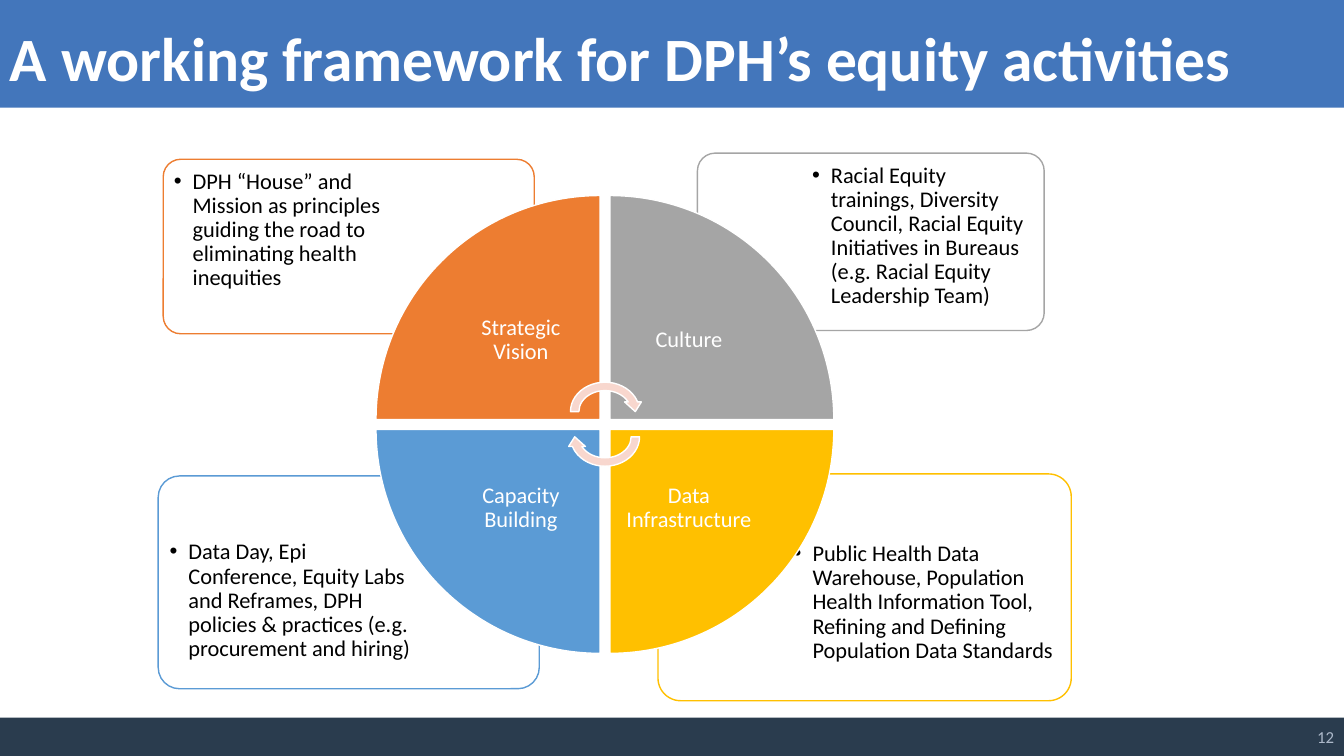
from lxml import etree
from pptx import Presentation
from pptx.dml.color import RGBColor
from pptx.enum.shapes import MSO_SHAPE
from pptx.enum.text import MSO_ANCHOR, PP_ALIGN
from pptx.oxml.ns import qn
from pptx.util import Pt

RECT = MSO_SHAPE.RECTANGLE
ROUND = MSO_SHAPE.ROUNDED_RECTANGLE
WEDGE = MSO_SHAPE.PIE_WEDGE
ARROW = MSO_SHAPE.CIRCULAR_ARROW
TOP, MIDDLE = MSO_ANCHOR.TOP, MSO_ANCHOR.MIDDLE
LEFT, CENTER, RIGHT = PP_ALIGN.LEFT, PP_ALIGN.CENTER, PP_ALIGN.RIGHT

COLORS = {
    "header": "4376BB", "footer": "2A3C4E", "number": "ADB9CA",
    "white": "FFFFFF", "black": "000000", "arrow": "F8D7CE",
    "vision": "ED7D31", "culture": "A5A5A5",
    "data": "FFC000", "capacity": "5B9BD5",
}

WIDTH, HEIGHT = 960, 540
WHEEL_X, WHEEL_Y = 268.6, 139.7
RADIUS, PITCH = 160, 167
LABEL = 113
INDENT = 13.5

# colour, column, row, rotation, label, card box, card text
PARTS = [
    ("data", 1, 1, 180, "Data Infrastructure", (470, 338.5, 295.2, 162),
     "Public Health Data Warehouse, Population Health Information Tool, "
     "Refining and Defining Population Data Standards"),
    ("capacity", 0, 1, 270, "Capacity Building", (113, 340, 272.2, 152),
     "Data Day, Epi Conference, Equity Labs and Reframes, "
     "DPH policies & practices (e.g. procurement and hiring)"),
    ("culture", 1, 0, 90, "Culture", (498.2, 109.4, 247.7, 126.7),
     "Racial Equity trainings, Diversity Council, Racial Equity "
     "Initiatives in Bureaus (e.g. Racial Equity Leadership Team)"),
    ("vision", 0, 0, 0, "Strategic Vision", (116.6, 113.8, 265, 124.6),
     "DPH “House” and Mission as principles guiding the road to "
     "eliminating health inequities"),
]


def color(name):
    return RGBColor.from_string(COLORS[name])


def apply(target, values):
    for name, value in values.items():
        setattr(target, name, value)


def add_form(slide, kind, box, fill, line=None, turn=0):
    form = slide.shapes.add_shape(kind, *map(Pt, box))
    form.shadow.inherit = False
    form.rotation = turn
    form.fill.solid()
    form.fill.fore_color.rgb = color(fill)
    if line:
        form.line.color.rgb = color(line)
        form.line.width = Pt(1)
    else:
        form.line.fill.background()
    return form


def add_text(slide, box, text, ink, size=16, bold=False, align=LEFT,
             anchor=TOP, pad=(7.2, 3.6), space=0.9):
    frame = slide.shapes.add_textbox(*map(Pt, box)).text_frame
    side, end = map(Pt, pad)
    apply(frame, {"word_wrap": True, "vertical_anchor": anchor,
                  "margin_left": side, "margin_right": side,
                  "margin_top": end, "margin_bottom": end})
    para = frame.paragraphs[0]
    apply(para, {"alignment": align, "line_spacing": space})
    run = para.add_run()
    run.text = text
    apply(run.font, {"name": "Calibri", "size": Pt(size), "bold": bold})
    run.font.color.rgb = color(ink)
    return para


def add_bullet(para):
    props = para._p.get_or_add_pPr()
    props.set("marL", str(Pt(INDENT)))
    props.set("indent", str(-Pt(INDENT)))
    etree.SubElement(props, qn("a:buFont")).set("typeface", "Arial")
    etree.SubElement(props, qn("a:buChar")).set("char", "•")


def add_card(slide, hue, col, row, box, text):
    """Draw a bordered card whose text keeps to its outer corner."""
    card = add_form(slide, ROUND, box, "white", hue)
    card.adjustments[0] = 0.1
    tint = card.fill._xPr.find(".//" + qn("a:srgbClr"))
    etree.SubElement(tint, qn("a:alpha")).set("val", "90000")
    x, y, wide, high = box
    edge = 0.022 * high
    area = (x + 0.3 * wide * col + edge, y + 0.25 * high * row + edge,
            0.7 * wide - 2 * edge, 0.75 * high - 2 * edge)
    add_bullet(add_text(slide, area, text, "black", pad=(4.8, 4.8)))


def add_wedge(slide, hue, col, row, turn, label):
    """Draw a quarter of the wheel with its label near the hub."""
    x, y = WHEEL_X + PITCH * col, WHEEL_Y + PITCH * row
    add_form(slide, WEDGE, (x, y, RADIUS, RADIUS), hue, "white", turn)
    inset = RADIUS - LABEL
    area = (x + inset * (1 - col), y + inset * (1 - row), LABEL, LABEL)
    add_text(slide, area, label, "white", align=CENTER, anchor=MIDDLE,
             pad=(8.9, 8.9))


def main():
    deck = Presentation()
    deck.slide_width, deck.slide_height = Pt(WIDTH), Pt(HEIGHT)
    slide = deck.slides.add_slide(deck.slide_layouts[6])

    add_form(slide, RECT, (0, 0, WIDTH, 77), "header")
    add_form(slide, RECT, (0, 512.6, WIDTH, 27.4), "footer")
    add_text(slide, (0, 16.6, WIDTH, 77.8),
             "A working framework for DPH’s equity activities",
             "white", size=44, bold=True)

    for hue, col, row, turn, label, box, text in PARTS:
        add_card(slide, hue, col, row, box, text)
    for hue, col, row, turn, label, box, text in PARTS:
        add_wedge(slide, hue, col, row, turn, label)
    for top, turn in ((270, 0), (288, 180)):
        add_form(slide, ARROW, (404.5, top, 55.3, 48), "arrow", "white", turn)

    add_text(slide, (744.5, 512, 215.5, 28.8), "12", "number", size=12,
             align=RIGHT, anchor=MIDDLE, space=1.0)
    deck.save("out.pptx")


if __name__ == "__main__":
    main()
